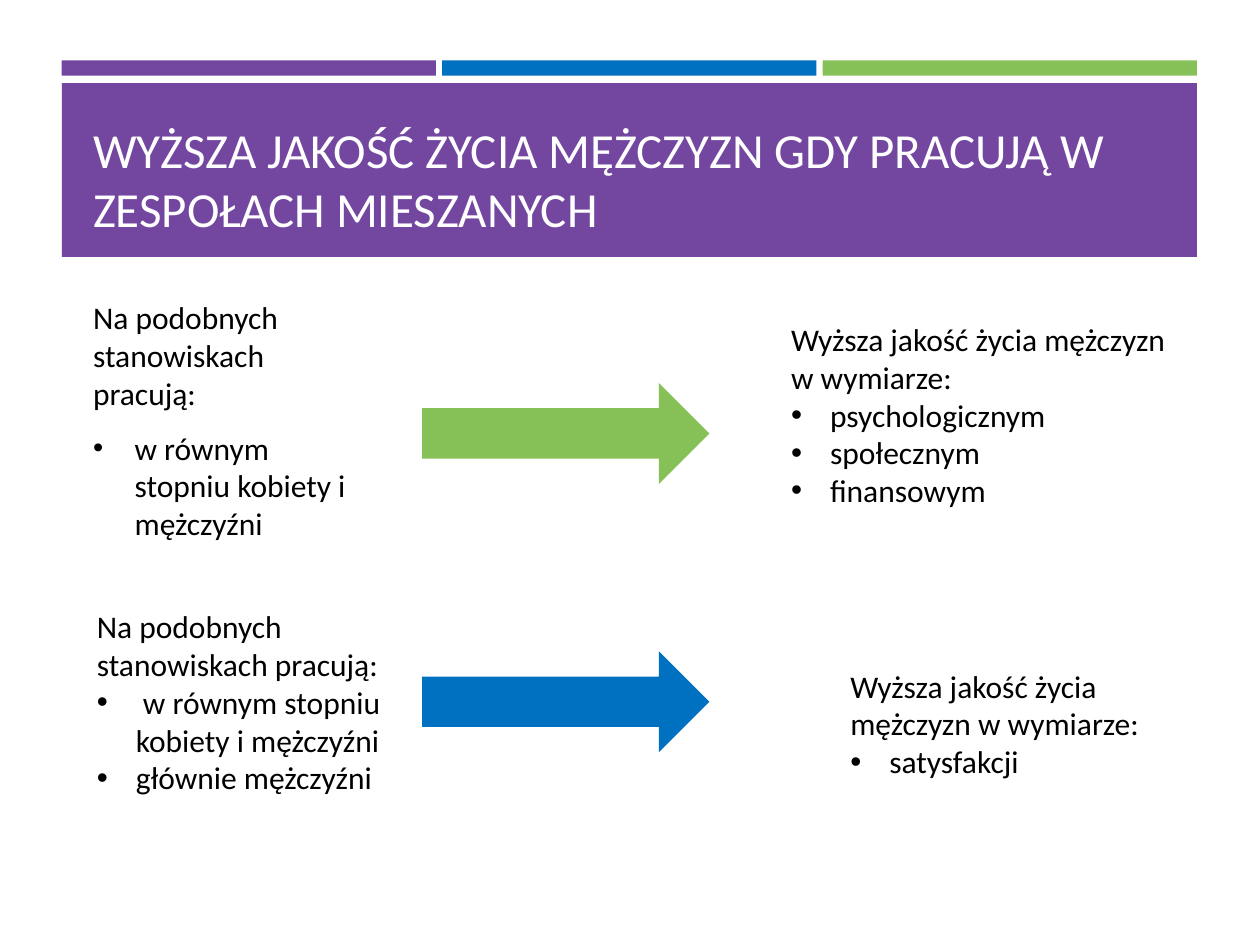
from lxml import etree
from pptx import Presentation
from pptx.dml.color import RGBColor
from pptx.enum.shapes import MSO_SHAPE
from pptx.enum.text import MSO_ANCHOR
from pptx.oxml.ns import qn
from pptx.util import Inches, Pt

RECTANGLE, ARROW = MSO_SHAPE.RECTANGLE, MSO_SHAPE.RIGHT_ARROW
TOP, MIDDLE, BOTTOM = MSO_ANCHOR.TOP, MSO_ANCHOR.MIDDLE, MSO_ANCHOR.BOTTOM
FONT = "Calibri"
COLORS = {"purple": "7346A0", "blue": "0070C0", "green": "86C157",
          "white": "FFFFFF", "black": "000000"}

deck = Presentation()
deck.slide_width, deck.slide_height = Inches(10), Inches(7.5)
page = deck.slides.add_slide(deck.slide_layouts[6])


def add_block(kind, left, top, width, height, color):
    block = page.shapes.add_shape(kind, Inches(left), Inches(top),
                                  Inches(width), Inches(height))
    block.shadow.inherit = False
    block.fill.solid()
    block.fill.fore_color.rgb = RGBColor.from_string(COLORS[color])
    block.line.fill.background()


def add_text(place, lines, anchor=TOP, size=18, color="black", indent=0.31,
             bullet_size=100, before=0, after=0, right_inset=0.1):
    """Write the first line plain and the others as bullets."""
    box = page.shapes.add_textbox(*(Inches(length) for length in place))
    frame = box.text_frame
    frame.word_wrap = True
    frame.vertical_anchor = anchor
    frame.margin_right = Inches(right_inset)
    for index, line in enumerate(lines):
        para = frame.paragraphs[0] if index == 0 else frame.add_paragraph()
        para.space_before, para.space_after = Pt(before), Pt(after)
        span = para.add_run()
        span.text = line
        span.font.name = FONT
        span.font.size = Pt(size)
        span.font.color.rgb = RGBColor.from_string(COLORS[color])
        if index:
            settings = para._p.get_or_add_pPr()
            settings.set("marL", str(Inches(indent)))
            settings.set("indent", str(-Inches(indent)))
            etree.SubElement(settings, qn("a:buSzPct"), val=str(bullet_size * 1000))
            etree.SubElement(settings, qn("a:buFont"), typeface="Arial")
            etree.SubElement(settings, qn("a:buChar"), char="•")


# Header: three stripes above the title band
for column, color in enumerate(("purple", "blue", "green")):
    add_block(RECTANGLE, 0.49 + column * 3.02, 0.48, 2.97, 0.12, color)
add_block(RECTANGLE, 0.49, 0.66, 9.01, 1.38, "purple")
add_text((0.64, 0.75, 8.74, 1.18),
         ["WYŻSZA JAKOŚĆ ŻYCIA MĘŻCZYZN GDY PRACUJĄ W ZESPOŁACH MIESZANYCH"],
         anchor=BOTTOM, size=28, color="white")

# Arrows from cause to effect
for top, color in ((3.04, "green"), (5.17, "blue")):
    add_block(ARROW, 3.35, top, 2.28, 0.8, color)

# Causes on the left
cause = "Na podobnych stanowiskach pracują:"
add_text((0.64, 2.44, 2.79, 1.79),
         [cause, "w równym stopniu kobiety i mężczyźni"],
         anchor=MIDDLE, indent=0.33, bullet_size=92, before=3.6, after=6,
         right_inset=0.55)
add_text((0.67, 4.77, 2.52, 1.62),
         [cause, " w równym stopniu kobiety i mężczyźni", "głównie mężczyźni"])

# Effects on the right
effect = "Wyższa jakość życia mężczyzn w wymiarze:"
add_text((6.18, 2.49, 3.23, 1.62),
         [effect, "psychologicznym", "społecznym", "finansowym"])
add_text((6.65, 4.93, 3.15, 1.31), [effect, "satysfakcji"], anchor=BOTTOM)

deck.save("out.pptx")
